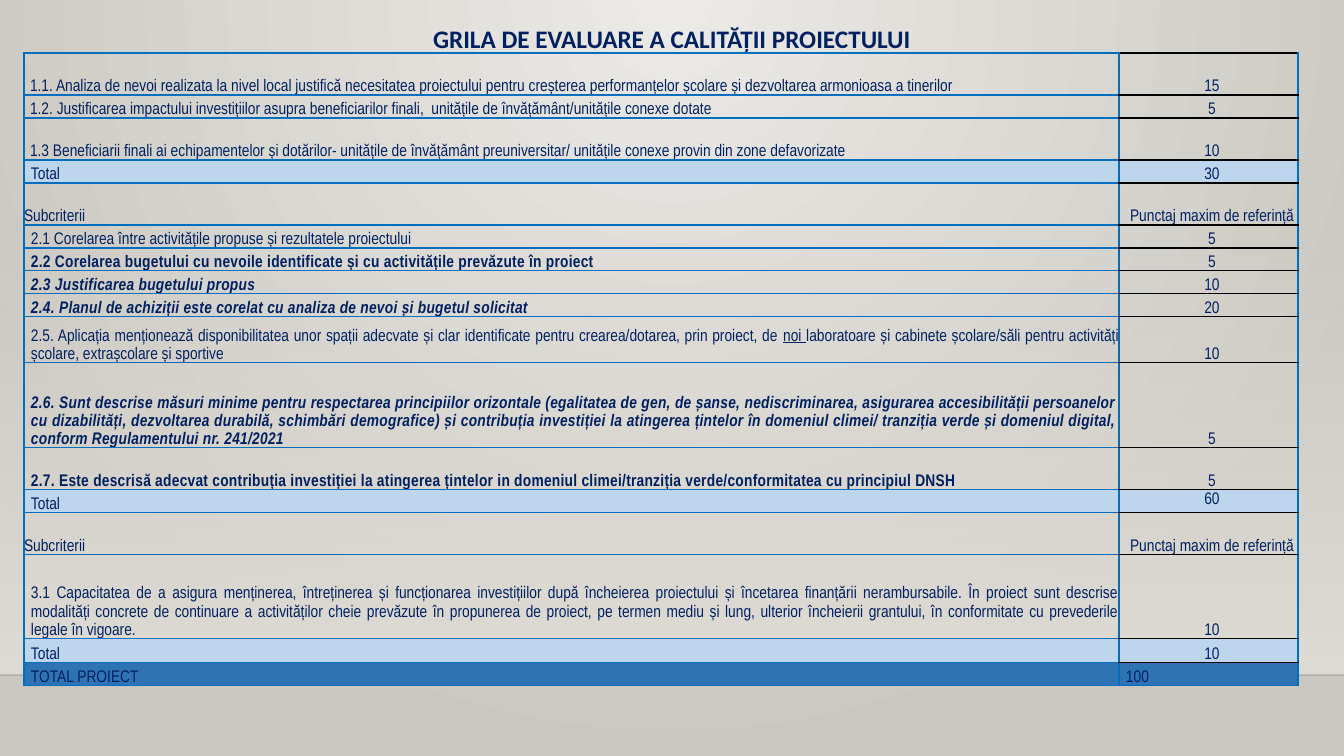
from lxml import etree
from pptx import Presentation
from pptx.dml.color import RGBColor
from pptx.enum.shapes import MSO_CONNECTOR, MSO_SHAPE
from pptx.enum.text import MSO_ANCHOR, PP_ALIGN
from pptx.oxml.ns import qn
from pptx.util import Pt

RECT, STRAIGHT = MSO_SHAPE.RECTANGLE, MSO_CONNECTOR.STRAIGHT
TOP, BOTTOM = MSO_ANCHOR.TOP, MSO_ANCHOR.BOTTOM
LEFT, CENTER, JUSTIFY = PP_ALIGN.LEFT, PP_ALIGN.CENTER, PP_ALIGN.JUSTIFY

WIDTH, HEIGHT = 1344, 756
SCALE = 12192000 / WIDTH
COLORS = {
    "ink": "002060", "blue": "006FC0", "black": "000000", "horizon": "000001",
    "light": "ECEAE7", "dark": "CAC7C1", "floor": "DFDBD5",
    "subtotal": "BDD6EE", "total": "2E74B5",
}
REFERENCE = "Punctaj maxim de referință"

ROWS = [
    (42, "1.1. Analiza de nevoi realizata la nivel local justifică necesitatea proiectului pentru creșterea performanțelor școlare și dezvoltarea armonioasa a tinerilor", "15", "criterion"),
    (23, "1.2. Justificarea impactului investițiilor asupra beneficiarilor finali,  unitățile de învățământ/unitățile conexe dotate", "5", "criterion"),
    (42, "1.3 Beneficiarii finali ai echipamentelor și dotărilor- unitățile de învățământ preuniversitar/ unitățile conexe provin din zone defavorizate", "10", "criterion"),
    (23, "Total", "30", "subtotal"),
    (42, "Subcriterii", REFERENCE, "heading"),
    (23, "2.1 Corelarea între activitățile propuse și rezultatele proiectului", "5", "plain"),
    (23, "2.2 Corelarea bugetului cu nevoile identificate și cu activitățile prevăzute în proiect", "5", "bold"),
    (23, "2.3 Justificarea bugetului propus", "10", "italic"),
    (23, "2.4. Planul de achiziții este corelat cu analiza de nevoi și bugetul solicitat", "20", "italic"),
    (46, "2.5. Aplicația menționează disponibilitatea unor spații adecvate și clar identificate pentru crearea/dotarea, prin proiect, de _noi _laboratoare și cabinete școlare/săli pentru activități școlare, extrașcolare și sportive", "10", "plain"),
    (85, "2.6. Sunt descrise măsuri minime pentru respectarea principiilor orizontale (egalitatea de gen, de șanse, nediscriminarea, asigurarea accesibilității persoanelor cu dizabilități, dezvoltarea durabilă, schimbări demografice) și contribuția investiției la atingerea țintelor în domeniul climei/ tranziția verde și domeniul digital, conform Regulamentului nr. 241/2021", "5", "italic"),
    (42, "2.7. Este descrisă adecvat contribuția investiției la atingerea țintelor in domeniul climei/tranziția verde/conformitatea cu principiul DNSH", "5", "bold"),
    (23, "Total", "60", "subtotal"),
    (42, "Subcriterii", REFERENCE, "heading"),
    (84, "3.1 Capacitatea de a asigura menținerea, întreținerea și funcționarea investițiilor după încheierea proiectului și încetarea finanțării nerambursabile. În proiect sunt descrise modalități concrete de continuare a activităților cheie prevăzute în propunerea de proiect, pe termen mediu și lung, ulterior încheierii grantului, în conformitate cu prevederile legale în vigoare.", "10", "plain"),
    (24, "Total", "10", "subtotal"),
    (23, "TOTAL PROIECT", "100", "total"),
]
INDENTS = {"criterion": 6, "heading": 0}


def px(n):
    return round(n * SCALE)


def rgb(name):
    return RGBColor.from_string(COLORS[name])


class Deck:
    def __init__(self):
        self.prs = Presentation()
        self.prs.slide_width, self.prs.slide_height = px(WIDTH), px(HEIGHT)
        self.s = self.prs.slides.add_slide(self.prs.slide_layouts[5])

    def set_alpha(self, color, percent):
        etree.SubElement(color, qn("a:alpha")).set("val", str(percent * 1000))

    def gradient(self, fill, first, last):
        fill.gradient()
        fill.gradient_angle = 270
        for stop, name, position in zip(fill.gradient_stops, (first, last), (0, 1)):
            stop.color.rgb = rgb(name)
            stop.position = position

    def background(self):
        self.gradient(self.s.background.fill, "light", "dark")
        lin = next(self.s._element.iter(qn("a:lin")))
        radial = etree.Element(qn("a:path"), {"path": "circle"})
        rect = {"l": "43000", "t": "0", "r": "43000", "b": "100000"}
        etree.SubElement(radial, qn("a:fillToRect"), rect)
        lin.getparent().replace(lin, radial)

    def floor(self, top, bottom):
        shape = self.s.shapes.add_shape(RECT, 0, px(top), px(WIDTH), px(bottom - top))
        shape.shadow.inherit = False
        shape.line.fill.background()
        self.gradient(shape.fill, "floor", "floor")
        self.set_alpha(next(shape._element.iter(qn("a:srgbClr"))), 0)

    def line(self, y):
        c = self.s.shapes.add_connector(STRAIGHT, 0, px(y), px(WIDTH), px(y))
        c.line.width = Pt(1)
        c.line.color.rgb = rgb("horizon")
        self.set_alpha(next(c._element.iter(qn("a:srgbClr"))), 20)
        etree.SubElement(c._element.spPr, qn("a:effectLst"))

    def format(self, p, font, size, align, bold=False, italic=False):
        p.alignment, p.line_spacing = align, 1.15
        p.space_before = p.space_after = Pt(0)
        p.font.name, p.font.size = font, Pt(size)
        p.font.bold, p.font.italic = bold, italic
        p.font.color.rgb = rgb("ink")

    def title(self, text, x, y, w, h):
        title = self.s.shapes.title
        title.left, title.top, title.width, title.height = map(px, (x, y, w, h))
        tf = title.text_frame
        tf.text, tf.word_wrap, tf.vertical_anchor = text, True, TOP
        self.format(tf.paragraphs[0], "Calibri", 18, CENTER, bold=True)
        self.s.shapes._spTree.append(title._element)

    def borders(self, cell, top, bottom):
        tcPr = cell._tc.get_or_add_tcPr()
        for side, name in zip("LRTB", ("blue", "blue", top, bottom)):
            ln = etree.SubElement(tcPr, qn("a:ln" + side), {"w": str(Pt(1))})
            fill = etree.SubElement(ln, qn("a:solidFill"))
            etree.SubElement(fill, qn("a:srgbClr")).set("val", COLORS[name])

    def cell(self, cell, text, kind, align, indent, edges, strong=False):
        self.borders(cell, *edges)
        if kind in COLORS:
            cell.fill.solid()
            cell.fill.fore_color.rgb = rgb(kind)
        else:
            cell.fill.background()
        cell.margin_right = cell.margin_top = cell.margin_bottom = 0
        cell.margin_left, cell.vertical_anchor = px(indent), BOTTOM
        p = cell.text_frame.paragraphs[0]
        for i, part in enumerate(text.split("_")):
            r = p.add_run()
            r.text = part
            if i % 2:
                r.font.underline = True
            if strong:
                r._r.get_or_add_rPr().set("spc", "20")
        self.format(p, "Arial Narrow", 12, align, strong, strong and kind == "italic")

    def table(self, rows, x, y, widths):
        height = sum(row[0] for row in rows)
        frame = self.s.shapes.add_table(len(rows), len(widths), px(x), px(y), px(sum(widths)), px(height))
        table = frame.table
        table.first_row = table.horz_banding = False
        for column, width in zip(table.columns, widths):
            column.width = px(width)
        for i, (height, text, score, kind) in enumerate(rows):
            table.rows[i].height = px(height)
            left, right = table.cell(i, 0), table.cell(i, 1)
            last = kind == "total"
            self.cell(left, text, kind, LEFT if kind == "bold" else JUSTIFY,
                      INDENTS.get(kind, 7), ("blue", "blue"), kind in ("bold", "italic"))
            self.cell(right, score, kind, JUSTIFY if last else CENTER, 7,
                      ("black", "blue" if last else "black"))
            if score == "60":
                right.vertical_anchor = TOP


def main():
    deck = Deck()
    deck.background()
    deck.floor(223, 675)
    deck.line(675)
    deck.title("GRILA DE EVALUARE A CALITĂȚII PROIECTULUI", 336, 14, 672, 43)
    deck.table(ROWS, 24, 53, (1095, 179))
    deck.prs.save("out.pptx")


if __name__ == "__main__":
    main()
